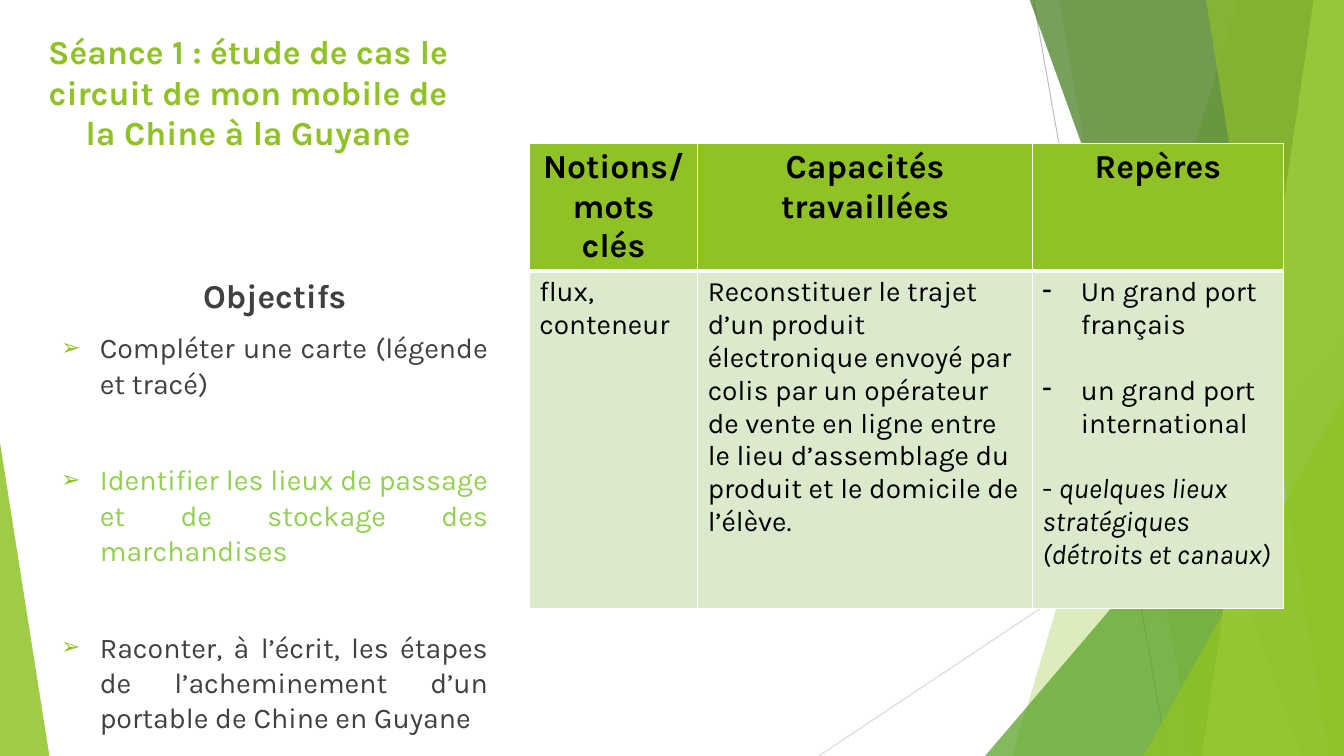
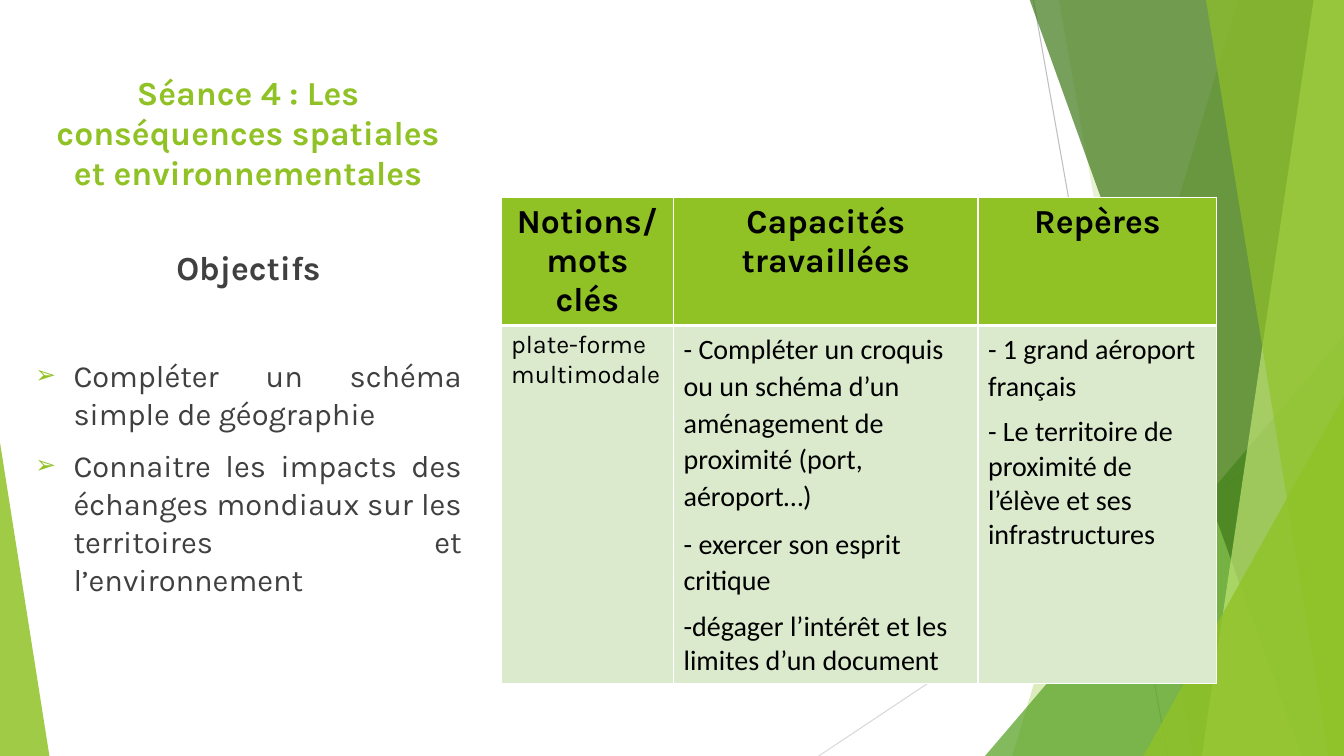
from dataclasses import dataclass

from lxml.etree import SubElement
from pptx import Presentation
from pptx.dml.color import RGBColor
from pptx.enum.shapes import MSO_CONNECTOR, MSO_SHAPE
from pptx.enum.text import MSO_ANCHOR, MSO_AUTO_SIZE, PP_ALIGN
from pptx.oxml.ns import qn
from pptx.util import Inches, Pt

GREEN = RGBColor(0x90, 0xC2, 0x26)
MID_GREEN = RGBColor(0x54, 0xA0, 0x21)
DARK_GREEN = RGBColor(0x3F, 0x78, 0x19)
LIME = RGBColor(0xC0, 0xE4, 0x74)
HIGHLIGHT = RGBColor(0x92, 0xD0, 0x50)
PALE_GREEN = RGBColor(0xDB, 0xE9, 0xCD)
WHITE = RGBColor(0xFF, 0xFF, 0xFF)
BLACK = RGBColor(0, 0, 0)
TEXT_GRAY = RGBColor(0x40, 0x40, 0x40)
LINE_GRAY = RGBColor(0xBF, 0xBF, 0xBF)
LIGHT_GRAY = RGBColor(0xD9, 0xD9, 0xD9)

WIDTH, HEIGHT = 13.33, 7.5
INDENT = 0.38
TITLE_BOX = (0.35, 0.32, 4.22, 1.64)
HEADINGS = ("Notions/mots clés", "Capacités travaillées", "Repères")


@dataclass
class Para:
    text: str
    size: float = 20
    font: str = "Karla"
    color: RGBColor = BLACK
    bold: bool = False
    italic: bool = False
    lead: str = ""  # upright text before an italic run
    bullet: str = ""
    align: PP_ALIGN = PP_ALIGN.LEFT
    before: float = 0
    after: float = 0
    spacing: float = 1.0


def set_bullet(paragraph, char):
    """Hanging bullet, or none at all when char is empty."""
    props = paragraph._p.get_or_add_pPr()
    indent = Inches(INDENT) if char else 0
    props.set("marL", str(indent))
    props.set("indent", str(-indent))
    if not char:
        SubElement(props, qn("a:buNone"))
        return
    if char == "➢":
        color = SubElement(props, qn("a:buClr"))
        SubElement(color, qn("a:srgbClr"), val=str(GREEN))
        SubElement(props, qn("a:buSzPct"), val="80000")
    SubElement(props, qn("a:buChar"), char=char)


def write(frame, paras):
    for index, para in enumerate(paras):
        paragraph = frame.paragraphs[0] if index == 0 else frame.add_paragraph()
        layout = {"alignment": para.align, "line_spacing": para.spacing,
                  "space_before": Pt(para.before), "space_after": Pt(para.after)}
        for name, value in layout.items():
            setattr(paragraph, name, value)
        set_bullet(paragraph, para.bullet)
        for text, italic in ((para.lead, False), (para.text, para.italic)):
            if not text:
                continue
            run = paragraph.add_run()
            run.text = text
            look = {"name": para.font, "size": Pt(para.size),
                    "bold": para.bold, "italic": italic}
            for name, value in look.items():
                setattr(run.font, name, value)
            run.font.color.rgb = para.color


def place(shape, box):
    for name, value in zip(("left", "top", "width", "height"), box):
        setattr(shape, name, Inches(value))


# Facet background, drawn once and kept on the layout
def paint(shape, color, opacity):
    shape.shadow.inherit = False
    shape.fill.solid()
    shape.fill.fore_color.rgb = color
    shape.line.fill.background()
    tint = shape.fill._xPr.find(qn("a:solidFill"))[0]
    SubElement(tint, qn("a:alpha"), val=str(opacity * 1000))


def add_ray(shapes, start, end, color):
    ray = shapes.add_connector(MSO_CONNECTOR.STRAIGHT,
                               *(Inches(v) for v in start + end))
    ray.line.color.rgb = color
    ray.line.width = Pt(0.75)
    SubElement(ray.element.spPr, qn("a:effectLst"))


def add_band(shapes, top_x, bottom_x, color, opacity):
    """Slanted band that reaches the right edge of the slide."""
    corners = [(top_x, -0.01), (WIDTH, -0.01), (WIDTH, HEIGHT), (bottom_x, HEIGHT)]
    points = [(Inches(x), Inches(y)) for x, y in corners]
    builder = shapes.build_freeform(*points[0], scale=1.0)
    builder.add_line_segments(points[1:], close=True)
    paint(builder.convert_to_shape(), color, opacity)


def add_triangle(shapes, left, top, width, apex, color, opacity):
    """Triangle that stands on the bottom edge of the slide."""
    box = (left, top, width, HEIGHT - top)
    triangle = shapes.add_shape(MSO_SHAPE.ISOSCELES_TRIANGLE,
                                *(Inches(v) for v in box))
    triangle.adjustments[0] = apex
    paint(triangle, color, opacity)


def add_facets(slide):
    group = slide.shapes.add_group_shape()
    facets = group.shapes
    add_ray(facets, (10.25, 0), (11.58, HEIGHT), LINE_GRAY)
    add_ray(facets, (WIDTH, 4.03), (8.12, HEIGHT), LIGHT_GRAY)
    add_band(facets, 12.28, 10.04, GREEN, 30)
    add_band(facets, 10.5, 11.83, GREEN, 20)
    add_triangle(facets, 9.77, 3.33, 3.56, 1, MID_GREEN, 72)
    add_band(facets, 10.21, 12.91, DARK_GREEN, 70)
    add_band(facets, 13.03, 11.92, LIME, 70)
    add_band(facets, 11.96, 13.18, GREEN, 65)
    add_triangle(facets, 11.34, 3.93, 1.99, 1, GREEN, 80)
    add_triangle(facets, 0, 4.39, 0.49, 0, GREEN, 85)
    # Fresh ids keep clear of those on the layout
    for number, node in enumerate(group.element.iter(qn("p:cNvPr")), 100):
        node.set("id", str(number))
    slide.slide_layout.shapes[0].element.addprevious(group.element)


# Session slide regions
def fill_title(title, text, bottom_inset):
    place(title, TITLE_BOX)
    frame = title.text_frame
    frame.auto_size = MSO_AUTO_SIZE.NONE
    frame.vertical_anchor = MSO_ANCHOR.BOTTOM
    frame.margin_bottom = Inches(bottom_inset)
    write(frame, [Para(text, 24, color=GREEN, bold=True, align=PP_ALIGN.CENTER)])


def fill_goals(body, left, top, heading_size, goals):
    place(body, (left, top, 4.43, 4.02))
    frame = body.text_frame
    frame.auto_size = MSO_AUTO_SIZE.NONE
    frame.vertical_anchor = MSO_ANCHOR.TOP
    heading = Para("Objectifs", heading_size, color=TEXT_GRAY, bold=True,
                   align=PP_ALIGN.CENTER, before=10)
    write(frame, [heading] + goals)


def goal(text, size, before=10, color=TEXT_GRAY):
    return Para(text, size, color=color, bullet="➢", align=PP_ALIGN.JUSTIFY,
                before=before, spacing=1.03)


def set_borders(cell, widths):
    props = cell._tc.get_or_add_tcPr()
    for side, width in zip("LRTB", widths):
        line = SubElement(props, qn("a:ln" + side), w=str(Pt(width)))
        fill = SubElement(line, qn("a:solidFill"))
        SubElement(fill, qn("a:srgbClr"), val=str(WHITE))


def add_skills_table(slide, left, top, widths, heights, contents):
    box = (left, top, sum(widths), sum(heights))
    table = slide.shapes.add_table(2, len(widths),
                                   *(Inches(v) for v in box)).table
    table.horz_banding = False
    for column, width in zip(table.columns, widths):
        column.width = Inches(width)
    for row, height in zip(table.rows, heights):
        row.height = Inches(height)
    headings = [[Para(text, 24, bold=True, align=PP_ALIGN.CENTER)]
                for text in HEADINGS]
    rows = ((headings, GREEN, (1, 1, 1, 3)), (contents, PALE_GREEN, (1, 1, 3, 1)))
    for r, (texts, color, borders) in enumerate(rows):
        for c, paras in enumerate(texts):
            cell = table.cell(r, c)
            set_borders(cell, borders)
            cell.fill.solid()
            cell.fill.fore_color.rgb = color
            write(cell.text_frame, paras)


def build_case_study(slide):
    fill_title(slide.shapes.title, "Séance 1 : étude de cas le circuit de mon "
               "mobile de la Chine à la Guyane", 0.45)
    add_skills_table(slide, 5.25, 1.42, (1.67, 3.32, 2.49), (1.27, 3.35), [
        [Para("flux, conteneur")],
        [Para("Reconstituer le trajet d’un produit électronique envoyé par colis "
              "par un opérateur de vente en ligne entre le lieu d’assemblage du "
              "produit et le domicile de l’élève.")],
        [Para("Un grand port français", bullet="-"),
         Para("un grand port international", bullet="-", before=23.4),
         Para("quelques lieux stratégiques (détroits et canaux)", lead="- ",
              italic=True, before=23.4)],
    ])
    fill_goals(slide.placeholders[1], 0.51, 2.68, 23.8, [
        goal("Compléter une carte (légende et tracé)", 20.4),
        goal("Identifier les lieux de passage et de stockage des marchandises",
             20.4, 44, HIGHLIGHT),
        goal("Raconter, à l’écrit, les étapes de l’acheminement d’un portable "
             "de Chine en Guyane", 20.4, 44),
    ])


def build_consequences(slide):
    fill_title(slide.shapes.title, "Séance 4 : Les conséquences spatiales et "
               "environnementales", 0.05)
    plain = {"font": "Calibri"}
    spaced = {"font": "Calibri", "spacing": 1.07, "after": 8}
    add_skills_table(slide, 4.97, 1.96, (1.71, 3.02, 2.37), (1.27, 3.55), [
        [Para("plate-forme multimodale", 18)],
        [Para("- Compléter un croquis ou un schéma d’un aménagement de proximité "
              "(port, aéroport…)", **spaced),
         Para("- exercer son esprit critique", **spaced),
         Para("-dégager l’intérêt et les limites d’un document", **plain)],
        [Para("- 1 grand aéroport français", **spaced),
         Para("- Le territoire de proximité de l’élève et ses infrastructures",
              **plain)],
    ])
    fill_goals(slide.placeholders[1], 0.25, 2.4, 24, [
        goal("Compléter un schéma simple de géographie", 22, 49),
        goal("Connaitre les impacts des échanges mondiaux sur les territoires et "
             "l’environnement", 22),
    ])


def main():
    deck = Presentation()
    deck.slide_width, deck.slide_height = Inches(WIDTH), Inches(HEIGHT)
    layout = deck.slide_layouts[1]
    for number, build in enumerate((build_case_study, build_consequences)):
        slide = deck.slides.add_slide(layout)
        if number == 0:
            add_facets(slide)
        build(slide)
    deck.save("out.pptx")


if __name__ == "__main__":
    main()
